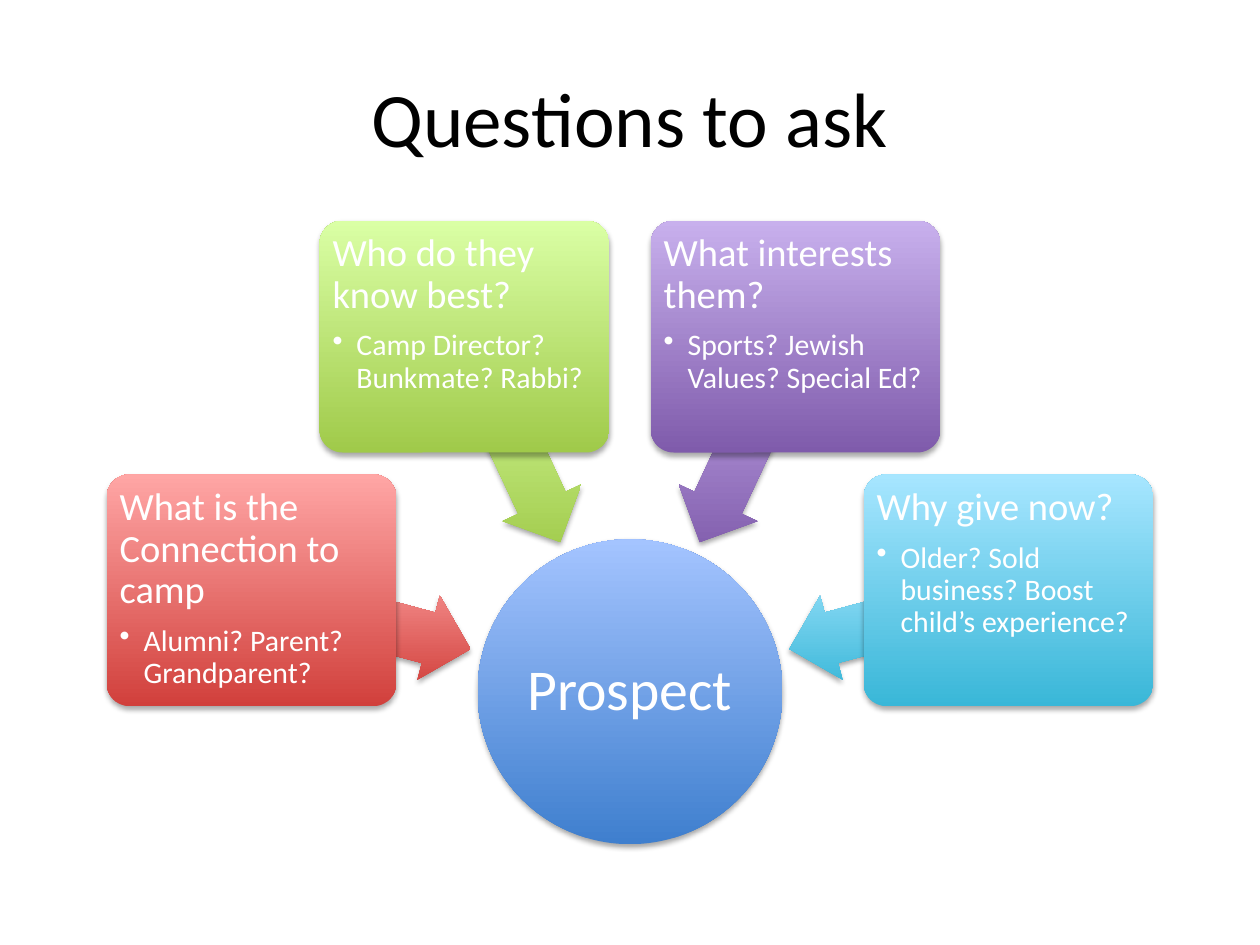
import math

from lxml import etree
from pptx import Presentation
from pptx import util as u
from pptx.dml.color import RGBColor
from pptx.enum import shapes, text
from pptx.oxml.ns import qn

FONT = "Calibri"
WHITE = "FFFFFF"
HUB_X, HUB_Y, HUB_SIZE = 5, 5.49, 2.42
ARROW_W, ARROW_H = 1.8, 0.69
ARROW_RADIUS = 2.21                          # hub centre to arrow centre
BOX_RADIUS = ARROW_RADIUS + ARROW_W / 2      # boxes sit on the arrow tails
BOX_W, BOX_H = 2.3, 1.84

# Angle around the hub, dark colour, light colour, question, examples
QUESTIONS = [
    (195, "D1403C", "FFA6A5", "What is the Connection to camp",
     "Alumni? Parent? Grandparent?"),
    (245, "A0CA4A", "DAFFA5", "Who do they know best?",
     "Camp Director? Bunkmate? Rabbi?"),
    (295, "7F5BAB", "C8B0ED", "What interests them?",
     "Sports? Jewish Values? Special Ed?"),
    (345, "39B7D8", "A7E6FF", "Why give now?",
     "Older? Sold business? Boost child’s experience?"),
]


def rgb(value):
    return RGBColor.from_string(value)


def add_run(p, words, size, color):
    r = p.add_run()
    r.text = words
    r.font.name, r.font.size = FONT, u.Pt(size)
    r.font.color.rgb = rgb(color)


def add_shadow(sp):
    sp.shadow.inherit = False
    effects = sp._element.spPr.find(qn("a:effectLst"))
    shadow = etree.SubElement(effects, qn("a:outerShdw"), blurRad=str(u.Pt(3.1)),
                              dist=str(u.Pt(1.8)), dir="5400000", rotWithShape="0")
    color = etree.SubElement(shadow, qn("a:srgbClr"), val="000000")
    etree.SubElement(color, qn("a:alpha"), val="35000")


def add_gradient_shape(s, kind, cx, cy, w, h, dark, light):
    """Shape centred on (cx, cy), dark at the bottom and light at the top."""
    sp = s.shapes.add_shape(kind, u.Inches(cx - w / 2), u.Inches(cy - h / 2),
                            u.Inches(w), u.Inches(h))
    sp.fill.gradient()
    sp.fill.gradient_angle = 90
    for stop, color, position in zip(sp.fill.gradient_stops, (dark, light), (0, 1)):
        stop.color.rgb = rgb(color)
        stop.position = position
    sp._element.spPr.find(qn("a:gradFill")).set("rotWithShape", "0")
    sp.line.fill.background()
    add_shadow(sp)
    return sp


def set_frame(sp, inset, anchor):
    tf = sp.text_frame
    tf.word_wrap = True
    tf.vertical_anchor = anchor
    tf.margin_left = tf.margin_right = u.Inches(inset)
    tf.margin_top = tf.margin_bottom = u.Inches(inset)
    return tf


def format_paragraph(p, align, after=0):
    p.alignment = align
    p.line_spacing = 0.9
    p.space_after = u.Pt(after)


def add_bullet(p):
    pPr = p._p.get_or_add_pPr()
    pPr.set("marL", str(u.Inches(0.19)))
    pPr.set("indent", str(-u.Inches(0.19)))
    etree.SubElement(pPr, qn("a:buChar"), char="•")


def around_hub(angle, radius):
    a = math.radians(angle)
    return HUB_X + radius * math.cos(a), HUB_Y + radius * math.sin(a)


def add_title(s, words):
    title = s.shapes.title
    title.left, title.top = u.Inches(0.5), u.Inches(0.3)
    title.width, title.height = u.Inches(9), u.Inches(1.25)
    title.text_frame.vertical_anchor = text.MSO_ANCHOR.MIDDLE
    p = title.text_frame.paragraphs[0]
    p.alignment = text.PP_ALIGN.CENTER
    add_run(p, words, 44, "000000")


def add_hub(s, words):
    sp = add_gradient_shape(s, shapes.MSO_SHAPE.OVAL, HUB_X, HUB_Y,
                            HUB_SIZE, HUB_SIZE, "3F7FCE", "A4C4FF")
    p = set_frame(sp, 0.02, text.MSO_ANCHOR.MIDDLE).paragraphs[0]
    format_paragraph(p, text.PP_ALIGN.CENTER)
    add_run(p, words, 33, WHITE)


def add_question(s, angle, dark, light, question, examples):
    # Arrow pointing at the hub
    arrow = add_gradient_shape(s, shapes.MSO_SHAPE.LEFT_ARROW,
                               *around_hub(angle, ARROW_RADIUS),
                               ARROW_W, ARROW_H, dark, light)
    arrow.adjustments[0], arrow.adjustments[1] = 0.6, 0.5
    arrow.rotation = angle

    # Box with the question and its examples
    box = add_gradient_shape(s, shapes.MSO_SHAPE.ROUNDED_RECTANGLE,
                             *around_hub(angle, BOX_RADIUS),
                             BOX_W, BOX_H, dark, light)
    box.adjustments[0] = 0.1
    tf = set_frame(box, 0.05, text.MSO_ANCHOR.TOP)
    p = tf.paragraphs[0]
    format_paragraph(p, text.PP_ALIGN.LEFT, after=7.7)
    add_run(p, question, 22, WHITE)
    p = tf.add_paragraph()
    p.level = 1
    format_paragraph(p, text.PP_ALIGN.LEFT)
    add_bullet(p)
    add_run(p, examples, 17, WHITE)


def main():
    prs = Presentation()
    prs.slide_width, prs.slide_height = u.Inches(10), u.Inches(7.5)
    s = prs.slides.add_slide(prs.slide_layouts[5])
    add_title(s, "Questions to ask")
    add_hub(s, "Prospect")
    for item in QUESTIONS:
        add_question(s, *item)
    prs.save("out.pptx")


if __name__ == "__main__":
    main()
